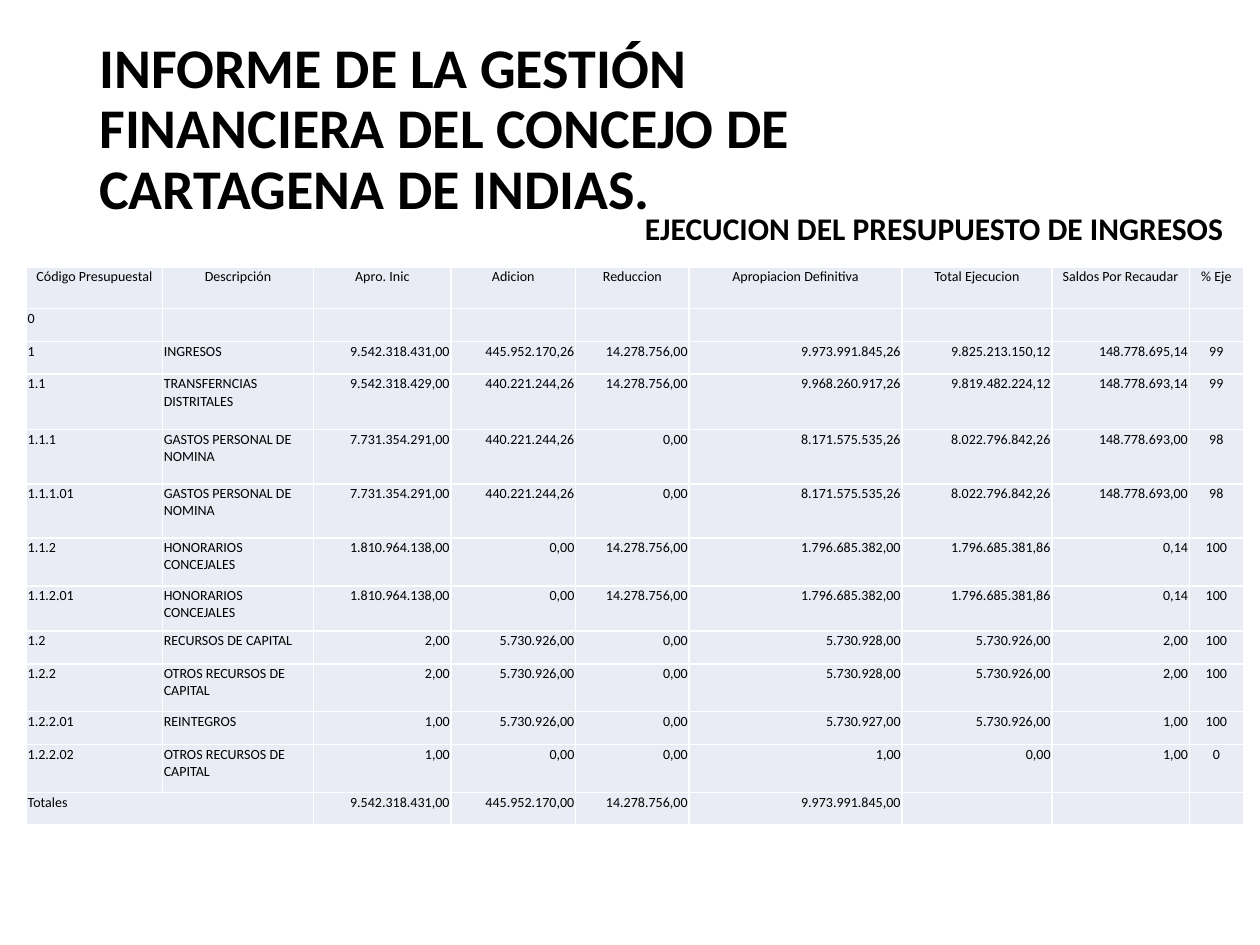
"""Build the slide on the income budget execution of the Cartagena council."""
from lxml import etree
from pptx import Presentation
from pptx.dml.color import RGBColor
from pptx.enum.text import MSO_ANCHOR, PP_ALIGN
from pptx.oxml.ns import qn
from pptx.util import Inches, Pt

LEFT, CENTER, RIGHT = PP_ALIGN.LEFT, PP_ALIGN.CENTER, PP_ALIGN.RIGHT
TOP, MIDDLE = MSO_ANCHOR.TOP, MSO_ANCHOR.MIDDLE
BLACK = RGBColor(0x00, 0x00, 0x00)
WHITE = RGBColor(0xFF, 0xFF, 0xFF)
PALE_BLUE = RGBColor(0xE9, 0xEB, 0xF5)
FONT = "Calibri"
CELL_SIZE = Pt(8)

HEADINGS = [
    {"text": "INFORME DE LA GESTIÓN FINANCIERA DEL CONCEJO DE CARTAGENA DE INDIAS.",
     "box": (0.69, 0.22, 6.75, 1.63), "size": 32, "spacing": 0.9,
     "frame": {"word_wrap": True, "vertical_anchor": MIDDLE}},
    {"text": "EJECUCION DEL PRESUPUESTO DE INGRESOS",
     "box": (5.02, 1.61, 4.84, 0.4), "size": 18, "spacing": 1.0,
     "frame": {"word_wrap": False, "vertical_anchor": TOP}},
]

HEADER = ("Código Presupuestal", "Descripción", "Apro. Inic", "Adicion", "Reduccion",
          "Apropiacion Definitiva", "Total Ejecucion", "Saldos Por Recaudar", "% Eje")
BUDGET = [
    ("0", "", "", "", "", "", "", "", ""),
    ("1", "INGRESOS", "9.542.318.431,00", "445.952.170,26", "14.278.756,00",
     "9.973.991.845,26", "9.825.213.150,12", "148.778.695,14", "99"),
    ("1.1", "TRANSFERNCIAS DISTRITALES", "9.542.318.429,00", "440.221.244,26", "14.278.756,00",
     "9.968.260.917,26", "9.819.482.224,12", "148.778.693,14", "99"),
    ("1.1.1", "GASTOS PERSONAL DE NOMINA", "7.731.354.291,00", "440.221.244,26", "0,00",
     "8.171.575.535,26", "8.022.796.842,26", "148.778.693,00", "98"),
    ("1.1.1.01", "GASTOS PERSONAL DE NOMINA", "7.731.354.291,00", "440.221.244,26", "0,00",
     "8.171.575.535,26", "8.022.796.842,26", "148.778.693,00", "98"),
    ("1.1.2", "HONORARIOS CONCEJALES", "1.810.964.138,00", "0,00", "14.278.756,00",
     "1.796.685.382,00", "1.796.685.381,86", "0,14", "100"),
    ("1.1.2.01", "HONORARIOS CONCEJALES", "1.810.964.138,00", "0,00", "14.278.756,00",
     "1.796.685.382,00", "1.796.685.381,86", "0,14", "100"),
    ("1.2", "RECURSOS DE CAPITAL", "2,00", "5.730.926,00", "0,00",
     "5.730.928,00", "5.730.926,00", "2,00", "100"),
    ("1.2.2", "OTROS RECURSOS DE CAPITAL", "2,00", "5.730.926,00", "0,00",
     "5.730.928,00", "5.730.926,00", "2,00", "100"),
    ("1.2.2.01", "REINTEGROS", "1,00", "5.730.926,00", "0,00",
     "5.730.927,00", "5.730.926,00", "1,00", "100"),
    ("1.2.2.02", "OTROS RECURSOS DE CAPITAL", "1,00", "0,00", "0,00",
     "1,00", "0,00", "1,00", "0"),
    ("Totales", "", "9.542.318.431,00", "445.952.170,00", "14.278.756,00",
     "9.973.991.845,00", "", "", ""),
]
TABLE_LEFT, TABLE_TOP = 0.21, 2.12
COLUMN_WIDTHS = (1.08, 1.2, 1.09, 0.99, 0.9, 1.69, 1.19, 1.09, 0.43)
ROW_HEIGHTS = (0.33, 0.26, 0.26, 0.44, 0.43, 0.43, 0.38, 0.36, 0.26, 0.38, 0.26, 0.38, 0.26)
COLUMN_ALIGNMENTS = [LEFT] * 2 + [RIGHT] * 6 + [CENTER]
CELL_FORMAT = {"margin_left": Inches(0.01), "margin_right": Inches(0.01),
               "margin_top": Inches(0.01), "margin_bottom": 0, "vertical_anchor": TOP}


def set_attributes(target, values):
    """Set every named attribute on the target."""
    for name, value in values.items():
        setattr(target, name, value)


def write(paragraph, text, size, bold=False):
    """Add one formatted run to the paragraph."""
    run = paragraph.add_run()
    run.text = text
    set_attributes(run.font, {"name": FONT, "size": size, "bold": bold})
    run.font.color.rgb = BLACK


def add_heading(slide, heading):
    """Add a bold heading box."""
    shape = slide.shapes.add_textbox(*map(Inches, heading["box"]))
    set_attributes(shape.text_frame, heading["frame"])
    paragraph = shape.text_frame.paragraphs[0]
    paragraph.line_spacing = heading["spacing"]
    write(paragraph, heading["text"], Pt(heading["size"]), True)


def add_borders(cell):
    """Draw a thin white line on each side of the cell."""
    properties = cell._tc.get_or_add_tcPr()
    for side in ("lnL", "lnR", "lnT", "lnB"):
        line = etree.SubElement(properties, qn(f"a:{side}"), w=str(Pt(1)))
        fill = etree.SubElement(line, qn("a:solidFill"))
        etree.SubElement(fill, qn("a:srgbClr"), val=str(WHITE))


def fill_cell(cell, text, alignment):
    """Format one cell and write its text."""
    set_attributes(cell, CELL_FORMAT)
    add_borders(cell)
    cell.fill.solid()
    cell.fill.fore_color.rgb = PALE_BLUE
    paragraph = cell.text_frame.paragraphs[0]
    paragraph.alignment = alignment
    if text:
        write(paragraph, text, CELL_SIZE)
    else:
        size = str(int(CELL_SIZE.pt * 100))
        etree.SubElement(paragraph._p, qn("a:endParaRPr"), sz=size)


def add_budget_table(slide):
    """Add the budget table with its merged totals label."""
    rows = [HEADER] + BUDGET
    table = slide.shapes.add_table(
        len(rows), len(HEADER), Inches(TABLE_LEFT), Inches(TABLE_TOP),
        Inches(sum(COLUMN_WIDTHS)), Inches(sum(ROW_HEIGHTS))).table
    set_attributes(table, {"first_row": False, "horz_banding": False})
    for column, width in zip(table.columns, COLUMN_WIDTHS):
        column.width = Inches(width)
    for row, height in zip(table.rows, ROW_HEIGHTS):
        row.height = Inches(height)
    for row_index, texts in enumerate(rows):
        alignments = COLUMN_ALIGNMENTS if row_index else [CENTER] * len(HEADER)
        for column_index, (text, alignment) in enumerate(zip(texts, alignments)):
            fill_cell(table.cell(row_index, column_index), text, alignment)
    last_row = len(rows) - 1
    table.cell(last_row, 0).merge(table.cell(last_row, 1))


def main():
    """Build and save the presentation."""
    presentation = Presentation()
    presentation.slide_width, presentation.slide_height = Inches(10), Inches(7.5)
    slide = presentation.slides.add_slide(presentation.slide_layouts[6])
    title, subtitle = HEADINGS
    add_heading(slide, title)
    add_budget_table(slide)
    add_heading(slide, subtitle)
    presentation.save("out.pptx")


if __name__ == "__main__":
    main()
